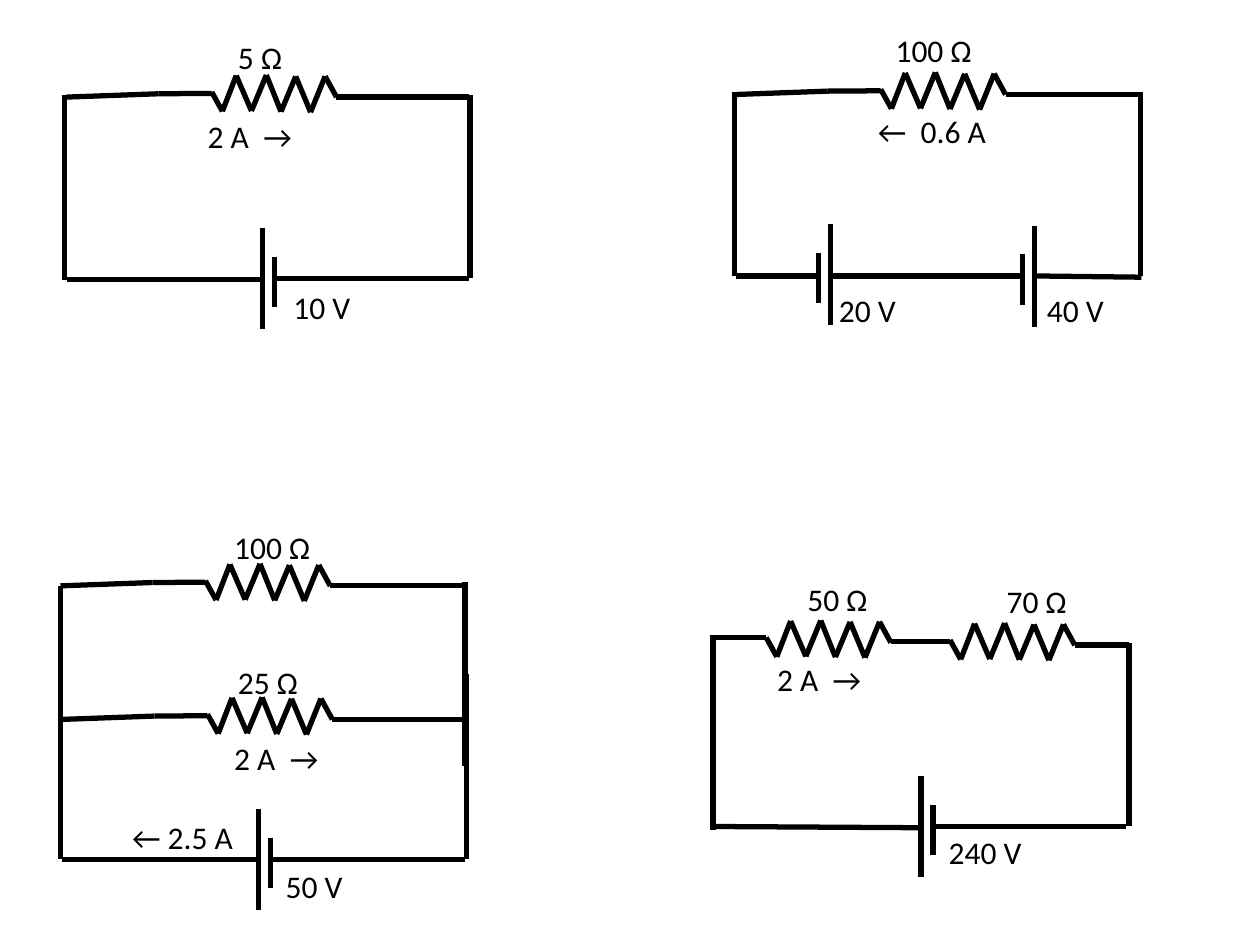
import dataclasses

import lxml.etree
import pptx
import pptx.dml.color
import pptx.enum.shapes
import pptx.enum.text
import pptx.oxml.ns
import pptx.util


@dataclasses.dataclass(frozen=True)
class Theme:
    ink: str = "000000"
    paper: str = "FFFFFF"
    font: str = "Calibri"
    label_size: int = 18
    wire_width: float = 3
    arrow_gap: float = 4.1


# Corner points of a resistor, in points from its left end.
ZIGZAG = [(0, 0), (6.1, 11), (14, -9.4), (22.7, 10.8), (31.2, -9.7),
          (39.6, 11.2), (48, -8.9), (56.5, 11.5), (64.8, -9), (71.3, 2.9)]


def write_text(para, text, *, font, size, color, spacing=0):
    """Add one run; spacing is extra space after each letter, in points."""
    span = para.add_run()
    span.text = text
    span.font.name = font
    span.font.size = pptx.util.Pt(size)
    span.font.color.rgb = pptx.dml.color.RGBColor.from_string(color)
    if spacing:
        span.font._element.set("spc", str(round(spacing * 100)))


class CircuitPage:
    def __init__(self, page, theme):
        self.page = page
        self.theme = theme
        page.background.fill.solid()
        page.background.fill.fore_color.rgb = (
            pptx.dml.color.RGBColor.from_string(theme.paper))

    def wire(self, *points):
        """Join the points with straight lines, one per pair."""
        for start, end in zip(points, points[1:]):
            line = self.page.shapes.add_connector(
                pptx.enum.shapes.MSO_CONNECTOR.STRAIGHT,
                *(pptx.util.Pt(value) for value in (*start, *end)))
            line.line.width = pptx.util.Pt(self.theme.wire_width)
            line.line.color.rgb = pptx.dml.color.RGBColor.from_string(self.theme.ink)
            lxml.etree.SubElement(line._element.spPr,
                                  pptx.oxml.ns.qn("a:effectLst"))

    def resistor(self, left, top):
        self.wire(*((left + dx, top + dy) for dx, dy in ZIGZAG))

    def resistor_branch(self, left, top):
        """A resistor with its leads to the left and right sides of a loop."""
        self.wire((left - 82.8, top + 2.9), (left - 30.3, top + 1),
                  (left, top + 0.8))
        self.resistor(left, top)
        self.wire((left + 71.3, top + 2.9), (left + 101.7, top + 2.9),
                  (left + 146.8, top + 2.9))

    def battery(self, left, top, short_offset=6.8):
        """A long plate at left, and a short one beside it."""
        self.wire((left, top), (left, top + 57.6))
        short = left + short_offset
        self.wire((short, top + 16.4), (short, top + 45.2))

    def label(self, left, top, text, after=None, width=57, wide_gap=False):
        """A caption; after is a second part, set off by a space."""
        box = self.page.shapes.add_textbox(
            *(pptx.util.Pt(value) for value in (left, top, width, 29)))
        frame = box.text_frame
        frame.word_wrap = True
        frame.auto_size = pptx.enum.text.MSO_AUTO_SIZE.SHAPE_TO_FIT_TEXT
        para = frame.paragraphs[0]
        style = dict(font=self.theme.font, size=self.theme.label_size,
                     color=self.theme.ink)
        write_text(para, text, **style)
        if after:
            write_text(para, " ", **style,
                       spacing=self.theme.arrow_gap if wide_gap else 0)
            write_text(para, after, **style)


def draw_single_resistor(circuit):
    circuit.battery(149.9, 130.3)
    circuit.resistor_branch(121, 52.6)
    circuit.wire((268.6, 54), (268.6, 159.1))
    circuit.wire((267.8, 159.1), (156.2, 159.1))
    circuit.wire((36.7, 54), (36.7, 159.8))
    circuit.wire((149, 159.8), (38.2, 159.8))
    circuit.label(160.6, 161.3, "10 V")
    circuit.label(111.6, 63.4, "2 A", "→", width=88, wide_gap=True)
    circuit.label(128.9, 18, "5 Ω")


def draw_two_batteries(circuit):
    circuit.battery(474.5, 128.2, short_offset=-6.8)
    circuit.battery(591.1, 129, short_offset=-6.8)
    circuit.resistor_branch(503.3, 51.1)
    circuit.wire((651.6, 52.6), (651.6, 157.7))
    circuit.wire((585.4, 157.7), (474.5, 157.7))
    circuit.wire((419.8, 52.6), (419.8, 157.7))
    circuit.wire((466.6, 157.7), (420.5, 157.7))
    circuit.wire((652.3, 158.4), (591.8, 157.7))
    circuit.label(472.3, 162.7, "20 V")
    circuit.label(591.1, 162.7, "40 V")
    circuit.label(504.7, 14.4, "100 Ω", width=94)
    circuit.label(494.6, 60.5, "←", "0.6 A", width=88, wide_gap=True)


def draw_parallel_resistors(circuit):
    circuit.battery(147.6, 462.2)
    circuit.resistor_branch(117.4, 331.9)
    circuit.resistor_branch(118.6, 408.2)
    circuit.wire((34.6, 334.8), (34.6, 439.9))
    circuit.wire((34.6, 385.2), (34.6, 491))
    circuit.wire((265.7, 332.6), (265.7, 437.8))
    circuit.wire((266.4, 385.2), (266.4, 491))
    circuit.wire((265.7, 491), (154.1, 491))
    circuit.wire((146.9, 491), (35.3, 491))
    circuit.label(126.7, 298.1, "100 Ω", width=76)
    circuit.label(128.9, 375.1, "25 Ω")
    circuit.label(126.7, 418.8, "2 A", "→", width=88, wide_gap=True)
    circuit.label(68.4, 463.7, "←", "2.5 A", width=88)
    circuit.label(156.2, 491.8, "50 V")


def draw_series_resistors(circuit):
    circuit.battery(526.3, 443.5)
    circuit.resistor(437.8, 364.3)
    circuit.resistor(542.9, 365.8)
    circuit.wire((407.5, 364.3), (437.8, 364.3))
    circuit.wire((509, 366.5), (542.9, 366.5))
    circuit.wire((614.2, 368.6), (645.1, 368.6))
    circuit.wire((645.1, 367.2), (645.1, 472.3))
    circuit.wire((643.7, 472.3), (532.8, 472.3))
    circuit.wire((407.5, 362.9), (407.5, 474.5))
    circuit.wire((525.6, 473), (407.5, 472.3))
    circuit.label(535, 472.3, "240 V")
    circuit.label(437, 373.7, "2 A", "→", width=88, wide_gap=True)
    circuit.label(454.3, 327.6, "50 Ω")
    circuit.label(568.1, 329, "70 Ω")


def main():
    deck = pptx.Presentation()
    deck.slide_width = pptx.util.Pt(720)
    deck.slide_height = pptx.util.Pt(540)
    blank_layout = deck.slide_layouts[6]
    circuit = CircuitPage(deck.slides.add_slide(blank_layout), Theme())
    draw_single_resistor(circuit)
    draw_two_batteries(circuit)
    draw_parallel_resistors(circuit)
    draw_series_resistors(circuit)
    deck.save("out.pptx")


if __name__ == "__main__":
    main()
